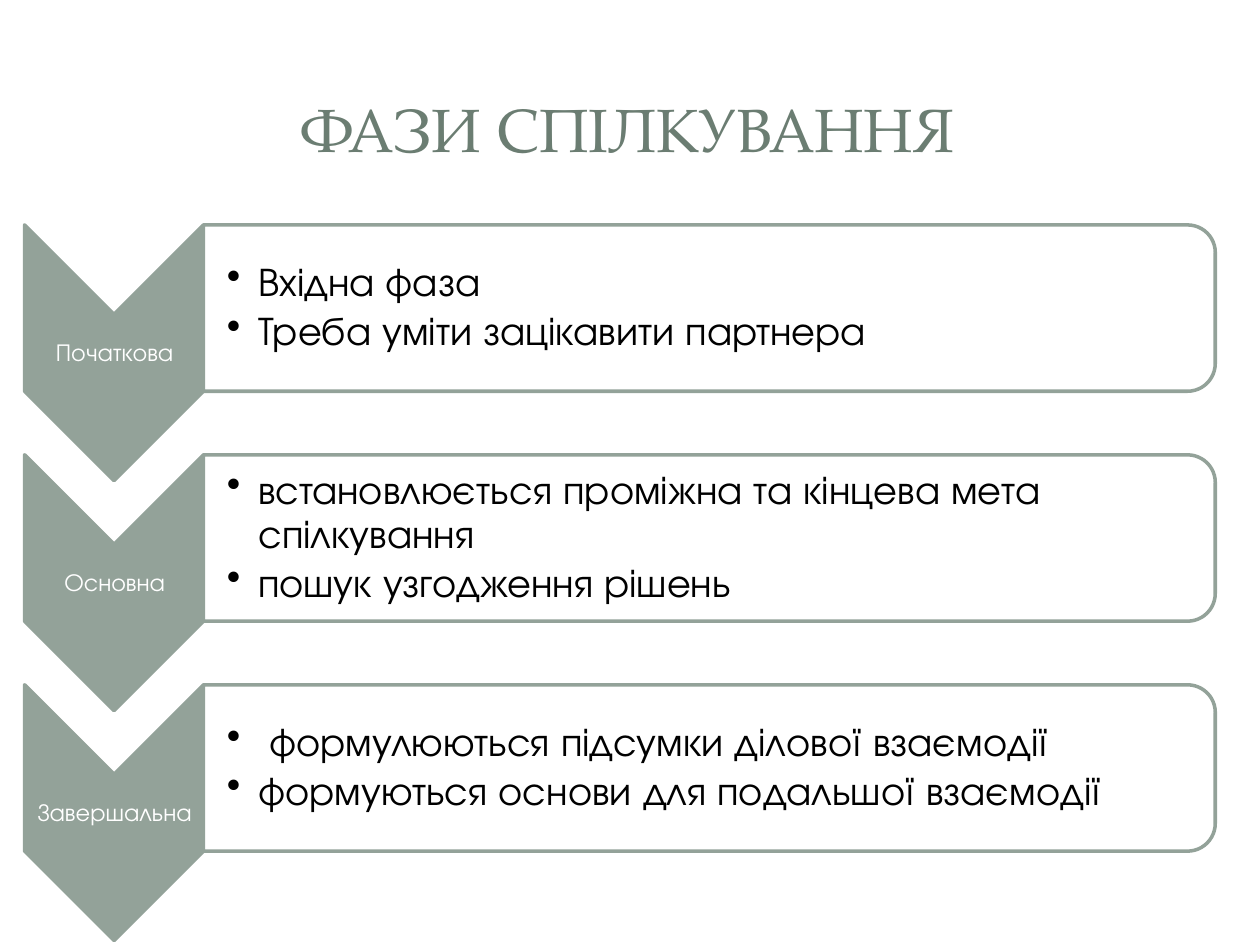
from lxml import etree
from pptx import Presentation
from pptx.dml.color import RGBColor
from pptx.enum.shapes import MSO_SHAPE
from pptx.enum.text import MSO_ANCHOR, PP_ALIGN
from pptx.oxml.ns import qn
from pptx.util import Pt

SCALE = 4572
CHEVRON = MSO_SHAPE.CHEVRON
PANEL = MSO_SHAPE.ROUND_2_SAME_RECTANGLE
MIDDLE = MSO_ANCHOR.MIDDLE
LEFT, CENTER = PP_ALIGN.LEFT, PP_ALIGN.CENTER
SERIF, SANS = "TeX Gyre Pagella", "TeX Gyre Adventor"
SAGE, WHITE = "93A299", "FFFFFF"
PITCH = 365
PHASES = [
    ("Початкова", ["Вхідна фаза", "Треба уміти зацікавити партнера"]),
    ("Основна", ["встановлюється проміжна та кінцева мета спілкування",
                 "пошук узгодження рішень"]),
    ("Завершальна", [" формулюються підсумки ділової взаємодії",
                     "формуються основи для подальшої взаємодії"]),
]


def px(size):
    """Turn px into EMU."""
    return size * SCALE


def color(code):
    """Turn a hex string into a colour."""
    return RGBColor.from_string(code)


class Deck:
    """Style and current slide, with a method for each kind of element."""

    def __init__(self, wide, high):
        """Open a deck with one blank slide."""
        self.file = Presentation()
        self.file.slide_width, self.file.slide_height = px(wide), px(high)
        self.slide = self.file.slides.add_slide(self.file.slide_layouts[6])

    def shape(self, kind, box, fill):
        """Add a preset shape turned a quarter to the right."""
        item = self.slide.shapes.add_shape(kind, *map(px, box))
        item.shadow.inherit = False
        item.rotation = 90
        item.fill.solid()
        item.fill.fore_color.rgb = color(fill)
        item.line.color.rgb = color(SAGE)
        item.line.width = Pt(2)
        return item

    def text(self, box, lines, font, size, tone, align=CENTER,
             inset=(2, 2, 2, 2), lead=0.9, bullet=False):
        """Add a text box with one paragraph a line."""
        frame = self.slide.shapes.add_textbox(*map(px, box)).text_frame
        frame.word_wrap = True
        frame.vertical_anchor = MIDDLE
        (frame.margin_left, frame.margin_top,
         frame.margin_right, frame.margin_bottom) = map(px, inset)
        frame.text = "\n".join(lines)
        for para in frame.paragraphs:
            para.alignment = align
            para.line_spacing = lead
            if bullet:
                para.space_after = Pt(3.5)
                self.bullet(para)
            for run in para.runs:
                run.font.name = font
                run.font.size = Pt(size)
                run.font.color.rgb = color(tone)

    def bullet(self, para):
        """Give a paragraph a hanging bullet."""
        props = para._p.get_or_add_pPr()
        props.set("marL", str(px(50)))
        props.set("indent", str(px(-50)))
        etree.SubElement(props, qn("a:buChar")).set("char", "•")

    def phase(self, down, name, points):
        """Add one phase: chevron, label, panel and points."""
        self.shape(CHEVRON, (-22, 418 + down, 406, 284), SAGE)
        self.text((40, 500 + down, 284, 122), [name], SANS, 14, WHITE)
        self.shape(PANEL, (994, down - 314, 264, 1606), WHITE)
        self.text((324, 370 + down, 1592, 238), points, SANS, 23, "000000",
                  LEFT, (36, 4, 4, 4), bullet=True)


def main():
    """Build the slide."""
    deck = Deck(2000, 1500)
    deck.text((94, 90, 1806, 228), ["ФАЗИ СПІЛКУВАННЯ"], SERIF, 35, "6B7D72",
              inset=(20, 10, 20, 10), lead=1.0)
    for row, (name, points) in enumerate(PHASES):
        deck.phase(row * PITCH, name, points)
    deck.file.save("out.pptx")


if __name__ == "__main__":
    main()
